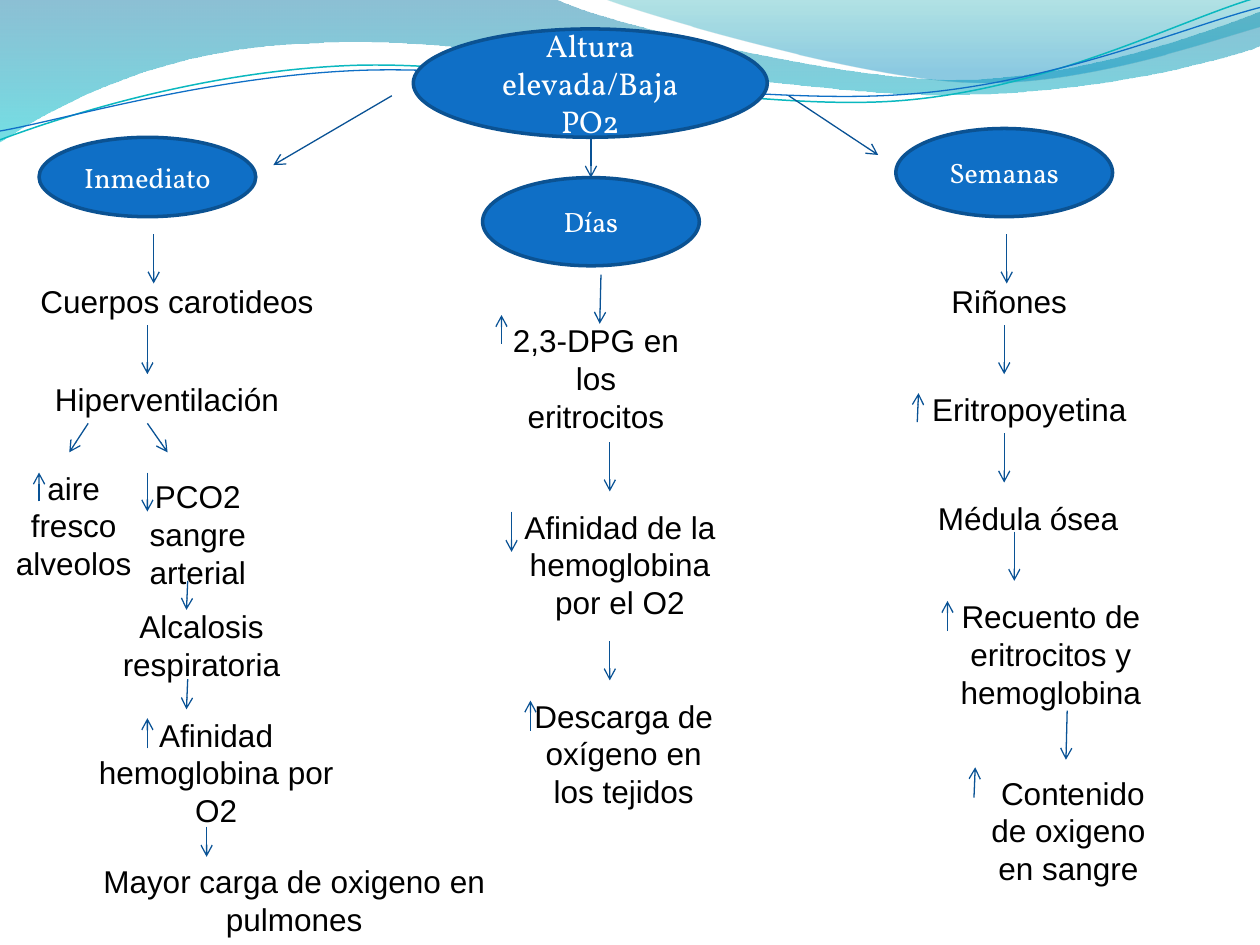
from dataclasses import dataclass
from math import cos, radians, sin

from lxml.etree import SubElement
from pptx import Presentation
from pptx.dml.color import RGBColor
from pptx.enum.shapes import MSO_CONNECTOR, MSO_SHAPE
from pptx.enum.text import MSO_ANCHOR, MSO_AUTO_SIZE, PP_ALIGN
from pptx.oxml.ns import qn
from pptx.util import Inches, Pt

COLORS = {
    "ellipse": "0F6FC6", "ellipse_line": "0B5292", "arrow": "095295",
    "wave_blue": "0074A1", "wave_cyan": "00C6CF",
    "crest_teal": "00A1A9", "crest_blue": "008BBF",
    "curve_teal": "0AB8BF", "white": "FFFFFF", "black": "000000",
}
LINE_HEIGHT = 0.303
CURVE_TILT = 2.7
Point = tuple[float, float]
Segment = list[Point]  # one point is a straight line, three are a cubic curve


@dataclass
class Bubble:
    text: str
    left: float
    top: float
    width: float
    height: float
    size: int = 16


@dataclass
class Label:
    text: str
    left: float
    top: float
    width: float
    lines: int = 1


@dataclass
class Stop:
    position: float
    color: str
    opacity: int


def rgb(name: str) -> RGBColor:
    return RGBColor.from_string(COLORS[name])


def write(frame, text: str, size: int, font: str, color: str) -> None:
    frame.word_wrap = True
    paragraph = frame.paragraphs[0]
    paragraph.alignment = PP_ALIGN.CENTER
    run = paragraph.add_run()
    run.text = text
    run.font.size = Pt(size)
    run.font.name = font
    run.font.color.rgb = rgb(color)


def curves(points: list[Point]) -> list[Segment]:
    return [points[index:index + 3] for index in range(0, len(points), 3)]


def add_outline(slide, start: Point, segments: list[Segment], close: bool):
    builder = slide.shapes.build_freeform(Inches(start[0]), Inches(start[1]))
    builder.add_line_segments([(Inches(x), Inches(y)) for segment in segments
                               for x, y in segment], close=close)
    shape = builder.convert_to_shape()
    shape.shadow.inherit = False
    # Merge each group of three line steps into one cubic curve
    steps = iter(list(shape._element.iter(qn("a:lnTo"))))
    for segment in segments:
        group = [next(steps) for _ in segment]
        if len(group) == 3:
            curve = SubElement(group[0].getparent(), qn("a:cubicBezTo"))
            group[0].addprevious(curve)
            for step in group:
                curve.append(step[0])
                step.getparent().remove(step)
    return shape


def add_wave(slide, start: Point, segments: list[Segment], stops: list[Stop]) -> None:
    shape = add_outline(slide, start, segments, True)
    shape.line.fill.background()
    shape.fill.gradient()
    shape.fill.gradient_angle = 270
    for target, stop in zip(shape.fill.gradient_stops, stops):
        target.position = stop.position
        target.color.rgb = rgb(stop.color)
    for color, stop in zip(shape._element.spPr.iter(qn("a:srgbClr")), stops):
        SubElement(color, qn("a:alpha"), val=str(stop.opacity * 1000))


def add_curve(slide, points: list[Point], center: Point, color: str, width: float) -> None:
    angle = radians(CURVE_TILT)
    level = []
    for x, y in points:
        across, down = x - center[0], y - center[1]
        level.append((center[0] + across * cos(angle) - down * sin(angle),
                      center[1] + across * sin(angle) + down * cos(angle)))
    shape = add_outline(slide, level[0], curves(level[1:]), False)
    shape.rotation = 360 - CURVE_TILT
    shape.fill.background()
    shape.line.color.rgb = rgb(color)
    shape.line.width = Pt(width)


def add_bubble(slide, bubble: Bubble) -> None:
    shape = slide.shapes.add_shape(MSO_SHAPE.OVAL, Inches(bubble.left), Inches(bubble.top),
                                   Inches(bubble.width), Inches(bubble.height))
    shape.shadow.inherit = False
    shape.fill.solid()
    shape.fill.fore_color.rgb = rgb("ellipse")
    shape.line.color.rgb = rgb("ellipse_line")
    shape.line.width = Pt(2)
    shape.text_frame.vertical_anchor = MSO_ANCHOR.MIDDLE
    write(shape.text_frame, bubble.text, bubble.size, "Vollkorn", "white")


def add_label(slide, label: Label) -> None:
    shape = slide.shapes.add_textbox(Inches(label.left), Inches(label.top), Inches(label.width),
                                     Inches(0.1 + LINE_HEIGHT * label.lines))
    shape.text_frame.auto_size = MSO_AUTO_SIZE.SHAPE_TO_FIT_TEXT
    write(shape.text_frame, label.text, 18, "Arial", "black")


def add_arrow(slide, start: Point, end: Point) -> None:
    connector = slide.shapes.add_connector(
        MSO_CONNECTOR.STRAIGHT, *(Inches(value) for value in (*start, *end)))
    connector.line.color.rgb = rgb("arrow")
    connector.line.width = Pt(0.75)
    SubElement(connector.line._get_or_add_ln(), qn("a:tailEnd"), type="arrow")
    SubElement(connector._element.spPr, qn("a:effectLst"))


BUBBLES = [
    Bubble("Altura elevada/Baja PO2", 3.28, 0.23, 2.81, 0.86, 18),
    Bubble("Inmediato", 0.31, 1.09, 1.72, 0.63),
    Bubble("Días", 3.83, 1.41, 1.72, 0.7),
    Bubble("Semanas", 7.11, 1.02, 1.72, 0.7),
]
LABELS = [
    # Immediate response
    Label("Cuerpos carotideos", 0, 2.19, 2.81),
    Label("Hiperventilación", 0.23, 2.97, 2.19),
    Label("aire fresco alveolos", 0, 3.67, 1.17, 3),
    Label("PCO2 sangre arterial", 1.06, 3.74, 1.02, 3),
    Label("Alcalosis respiratoria", 0.78, 4.77, 1.64, 2),
    Label("Afinidad hemoglobina por O2", 0.62, 5.63, 2.19, 3),
    Label("Mayor carga de oxigeno en pulmones", 0.7, 6.79, 3.27, 2),
    # Response within days
    Label("2,3-DPG en los eritrocitos", 3.91, 2.5, 1.64, 2),
    Label("Afinidad de la hemoglobina por el O2", 3.98, 3.98, 1.88, 3),
    Label("Descarga de oxígeno en los tejidos", 4.13, 5.48, 1.64, 3),
    # Response within weeks
    Label("Riñones", 7.19, 2.19, 1.64),
    Label("Eritropoyetina", 7.27, 3.05, 1.8),
    Label("Médula ósea", 7.34, 3.91, 1.64),
    Label("Recuento de eritrocitos y hemoglobina", 7.52, 4.69, 1.64, 3),
    Label(" Contenido de oxigeno en sangre", 7.66, 6.09, 1.64, 3),
]
# Arrows as start x, start y, run and rise; a negative rise points up
FLOW_ARROWS = [
    (3.11, 0.76, -0.94, 0.55), (4.69, 1.09, 0, 0.32), (6.26, 0.76, 0.71, 0.47),
    (1.22, 1.86, 0, 0.39), (1.17, 2.58, 0, 0.39), (0.7, 3.36, -0.15, 0.23),
    (1.17, 3.36, 0.16, 0.23), (1.49, 4.61, -0.01, 0.23), (1.49, 5.39, -0.01, 0.24),
    (1.64, 6.56, 0, 0.24), (4.77, 2.18, -0.01, 0.39), (4.84, 3.51, 0, 0.39),
    (4.84, 5.09, 0, 0.31), (7.99, 1.86, 0, 0.39), (7.97, 2.58, 0, 0.39),
    (7.97, 3.44, 0, 0.39), (8.05, 4.22, 0, 0.39), (8.47, 5.64, -0.01, 0.39),
]
CHANGE_ARROWS = [
    (0.31, 3.98, 0, -0.23), (1.17, 3.75, 0, 0.31), (1.17, 5.94, 0, -0.24),
    (3.98, 2.73, 0, -0.23), (4.06, 4.06, 0, 0.32), (4.21, 5.8, 0, -0.24),
    (7.28, 3.35, 0.01, -0.23), (7.52, 5.01, 0, -0.24), (7.73, 6.33, 0.01, -0.24),
]


def add_background(slide) -> None:
    upper_edge = [(4.76, 0.17), (6.64, 0.63), (7.58, 0.63), (8.53, 0.63), (9.58, 0.26), (10, 0.09)]
    lower_edge = [(9.83, 0.44), (8.7, 0.76), (7.46, 0.75), (6.22, 0.75), (3.82, 0.28),
                  (2.57, 0.34), (1.29, 0.36), (0.46, 0.83), (-0.01, 1.13)]
    add_wave(slide, (0, 0), [[(4.4, -0.01)], *curves(upper_edge), [(10.01, 0.36)],
                             *curves(lower_edge), [(0, 0)]],
             [Stop(0, "wave_blue", 45), Stop(1, "wave_cyan", 55)])
    crest = [(5.09, 0.11), (6.82, 0.62), (7.69, 0.65), (8.56, 0.69), (9.61, 0.32), (10, 0.21)]
    add_wave(slide, (4.79, -0.01), [*curves(crest), [(10, 0)], [(4.79, -0.01)]],
             [Stop(0, "crest_teal", 30), Stop(0.8, "crest_blue", 45)])
    add_curve(slide, [(0, 1.11), (0.48, 0.93), (1.58, 0.57), (2.77, 0.52), (3.95, 0.47),
                      (5.93, 0.89), (7.13, 0.8), (8.33, 0.71), (9.38, 0.15), (9.98, -0.02)],
              (4.99, 0.57), "curve_teal", 0.85)
    add_curve(slide, [(0, 1.04), (0.47, 0.96), (1.64, 0.61), (2.83, 0.56), (4.03, 0.51),
                      (5.97, 0.84), (7.17, 0.75), (8.36, 0.67), (9.41, 0.21), (10, 0.06)],
              (5, 0.59), "ellipse", 0.75)


def main() -> None:
    presentation = Presentation()
    presentation.slide_width, presentation.slide_height = Inches(10), Inches(7.5)
    slide = presentation.slides.add_slide(presentation.slide_layouts[6])
    add_background(slide)
    for bubble in BUBBLES:
        add_bubble(slide, bubble)
    for label in LABELS:
        add_label(slide, label)
    for x, y, run, rise in FLOW_ARROWS + CHANGE_ARROWS:
        add_arrow(slide, (x, y), (x + run, y + rise))
    presentation.save("out.pptx")


if __name__ == "__main__":
    main()
